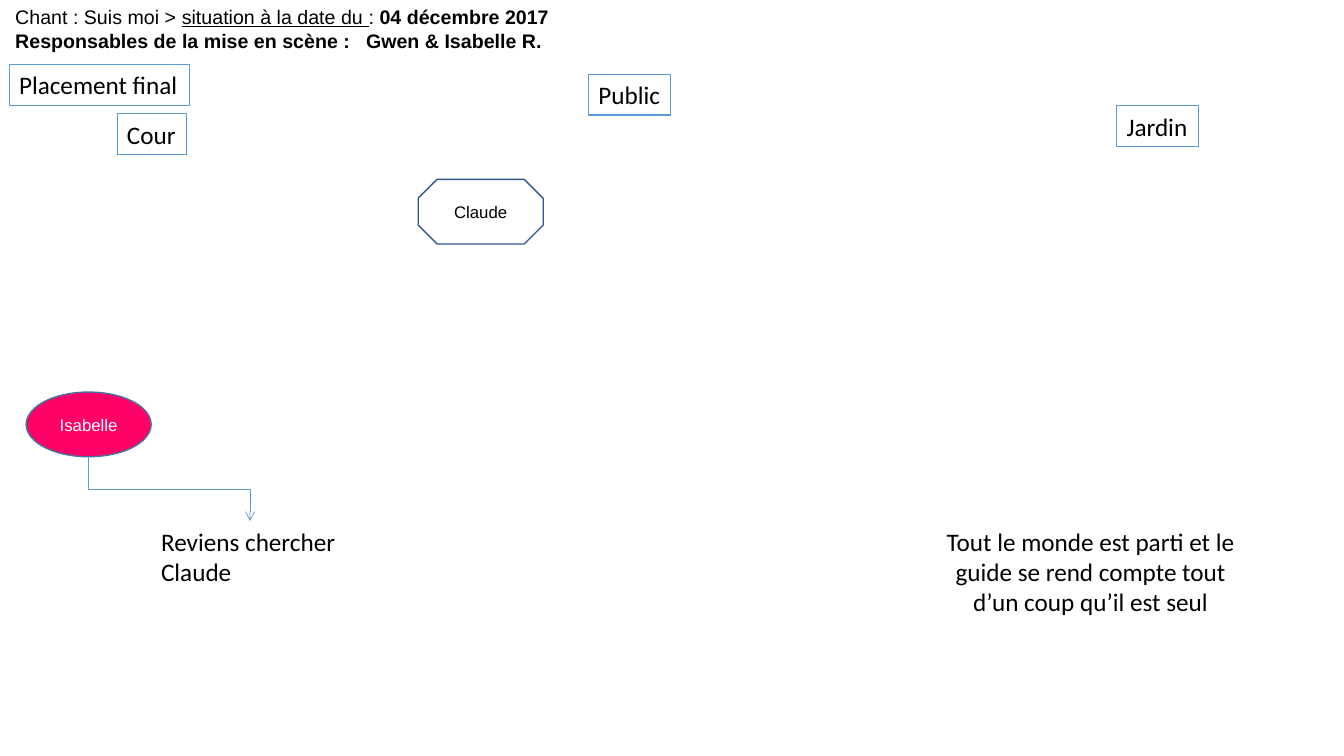
from dataclasses import dataclass
from typing import Optional

from lxml.etree import SubElement
from pptx import Presentation
from pptx.dml.color import RGBColor
from pptx.enum.shapes import MSO_CONNECTOR, MSO_SHAPE
from pptx.enum.text import MSO_ANCHOR, MSO_AUTO_SIZE, PP_ALIGN
from pptx.oxml.ns import qn
from pptx.util import Cm, Pt

COLORS = {
    "black": "000000",
    "white": "FFFFFF",
    "blue": "5B9BD5",
    "navy": "325491",
    "steel": "43739E",
    "pink": "FF0066",
}


@dataclass
class Label:
    text: str
    left: float
    top: float
    width: float


@dataclass
class Performer:
    name: str
    preset: MSO_SHAPE
    left: float
    top: float
    fill: str
    line: str
    font: str


@dataclass
class Note:
    text: str
    left: float
    width: float
    height: float
    alignment: PP_ALIGN


@dataclass
class HeaderRun:
    text: str
    bold: bool = False
    underline: bool = False


LABEL_HEIGHT = 1.02
PERFORMER_WIDTH = 3.15
PERFORMER_HEIGHT = 1.63
NOTE_TOP = 13.13

LABELS = [
    Label("Placement final", 0.23, 1.63, 4.55),
    Label("Public", 14.83, 1.88, 2.08),
    Label("Jardin", 28.14, 2.67, 2.06),
    Label("Cour", 2.95, 2.87, 1.75),
]
CLAUDE = Performer("Claude", MSO_SHAPE.OCTAGON, 10.54, 4.52, "white", "navy", "black")
ISABELLE = Performer("Isabelle", MSO_SHAPE.OVAL, 0.66, 9.88, "pink", "steel", "white")
RETURN_NOTE = Note("Reviens chercher Claude", 3.81, 4.98, 1.8, PP_ALIGN.LEFT)
ENDING_NOTE = Note(
    "Tout le monde est parti et le guide se rend compte tout d’un coup qu’il est seul",
    23.19, 8.59, 2.57, PP_ALIGN.CENTER,
)
HEADER = [
    [
        HeaderRun("Chant : Suis moi > "),
        HeaderRun("situation à la date du ", underline=True),
        HeaderRun(": "),
        HeaderRun("04 décembre 2017", bold=True),
    ],
    [HeaderRun("Responsables de la mise en scène :\tGwen & Isabelle R.", bold=True)],
]


def color(name: str) -> RGBColor:
    return RGBColor.from_string(COLORS[name])


def format_font(font, family: str, size: int, color_name: str) -> None:
    font.name = family
    font.size = Pt(size)
    font.color.rgb = color(color_name)


def write_text(shape, text: str, family: str, size: int, color_name: str,
               alignment: PP_ALIGN, anchor: MSO_ANCHOR, wrap: bool = True) -> None:
    frame = shape.text_frame
    frame.text = text
    frame.word_wrap = wrap
    frame.vertical_anchor = anchor
    paragraph = frame.paragraphs[0]
    paragraph.alignment = alignment
    format_font(paragraph.runs[0].font, family, size, color_name)


def add_outlined_shape(slide, preset: MSO_SHAPE, left: float, top: float, width: float,
                       height: float, fill: Optional[str], line: str, line_width: float):
    shape = slide.shapes.add_shape(preset, Cm(left), Cm(top), Cm(width), Cm(height))
    shape.shadow.inherit = False
    if fill:
        shape.fill.solid()
        shape.fill.fore_color.rgb = color(fill)
    else:
        shape.fill.background()
    shape.line.color.rgb = color(line)
    shape.line.width = Pt(line_width)
    return shape


def add_label(slide, label: Label) -> None:
    shape = add_outlined_shape(slide, MSO_SHAPE.RECTANGLE, label.left, label.top,
                               label.width, LABEL_HEIGHT, None, "blue", 0.75)
    write_text(shape, label.text, "Calibri", 18, "black", PP_ALIGN.LEFT, MSO_ANCHOR.TOP, False)


def add_performer(slide, performer: Performer) -> None:
    shape = add_outlined_shape(slide, performer.preset, performer.left, performer.top,
                               PERFORMER_WIDTH, PERFORMER_HEIGHT,
                               performer.fill, performer.line, 1)
    write_text(shape, performer.name, "Arial", 12, performer.font,
               PP_ALIGN.CENTER, MSO_ANCHOR.MIDDLE)


def add_note(slide, note: Note) -> None:
    shape = slide.shapes.add_textbox(Cm(note.left), Cm(NOTE_TOP), Cm(note.width), Cm(note.height))
    write_text(shape, note.text, "Calibri", 18, "black", note.alignment, MSO_ANCHOR.TOP)


def fill_header(title) -> None:
    title.left, title.top, title.width, title.height = Cm(0.13), Cm(0), Cm(14.05), Cm(1.45)
    frame = title.text_frame
    frame.auto_size = MSO_AUTO_SIZE.NONE
    frame.word_wrap = True
    frame.vertical_anchor = MSO_ANCHOR.TOP
    for index, header_runs in enumerate(HEADER):
        paragraph = frame.add_paragraph() if index else frame.paragraphs[0]
        paragraph.alignment = PP_ALIGN.LEFT
        for header_run in header_runs:
            run = paragraph.add_run()
            run.text = header_run.text
            format_font(run.font, "Arial", 14, "black")
            run.font.bold = header_run.bold
            run.font.underline = header_run.underline
    tab_stops = SubElement(frame.paragraphs[1]._p.get_or_add_pPr(), qn("a:tabLst"))
    SubElement(tab_stops, qn("a:tab"), pos=str(Cm(8.84)), algn="l")


def add_downward_elbow(slide, start_x: float, start_y: float, end_x: float, end_y: float) -> None:
    center_x, center_y = (start_x + end_x) / 2, (start_y + end_y) / 2
    half_width, half_height = (end_y - start_y) / 2, (end_x - start_x) / 2
    connector = slide.shapes.add_connector(
        MSO_CONNECTOR.ELBOW,
        Cm(center_x - half_width), Cm(center_y - half_height),
        Cm(center_x + half_width), Cm(center_y + half_height),
    )
    connector.line.color.rgb = color("blue")
    connector.line.width = Pt(0.5)
    properties = connector._element.spPr
    transform = properties.find(qn("a:xfrm"))
    transform.set("rot", str(270 * 60000))
    transform.set("flipH", "1")
    SubElement(properties.find(qn("a:ln")), qn("a:tailEnd"), type="arrow")
    SubElement(properties, qn("a:effectLst"))


def main() -> None:
    presentation = Presentation()
    presentation.slide_width, presentation.slide_height = Cm(33.87), Cm(19.05)
    slide = presentation.slides.add_slide(presentation.slide_layouts[5])
    fill_header(slide.shapes.title)
    for label in LABELS:
        add_label(slide, label)
    for performer in (CLAUDE, ISABELLE):
        add_performer(slide, performer)
    for note in (ENDING_NOTE, RETURN_NOTE):
        add_note(slide, note)
    add_downward_elbow(
        slide,
        ISABELLE.left + PERFORMER_WIDTH / 2, ISABELLE.top + PERFORMER_HEIGHT,
        RETURN_NOTE.left + RETURN_NOTE.width / 2, NOTE_TOP,
    )
    presentation.save("out.pptx")


if __name__ == "__main__":
    main()
